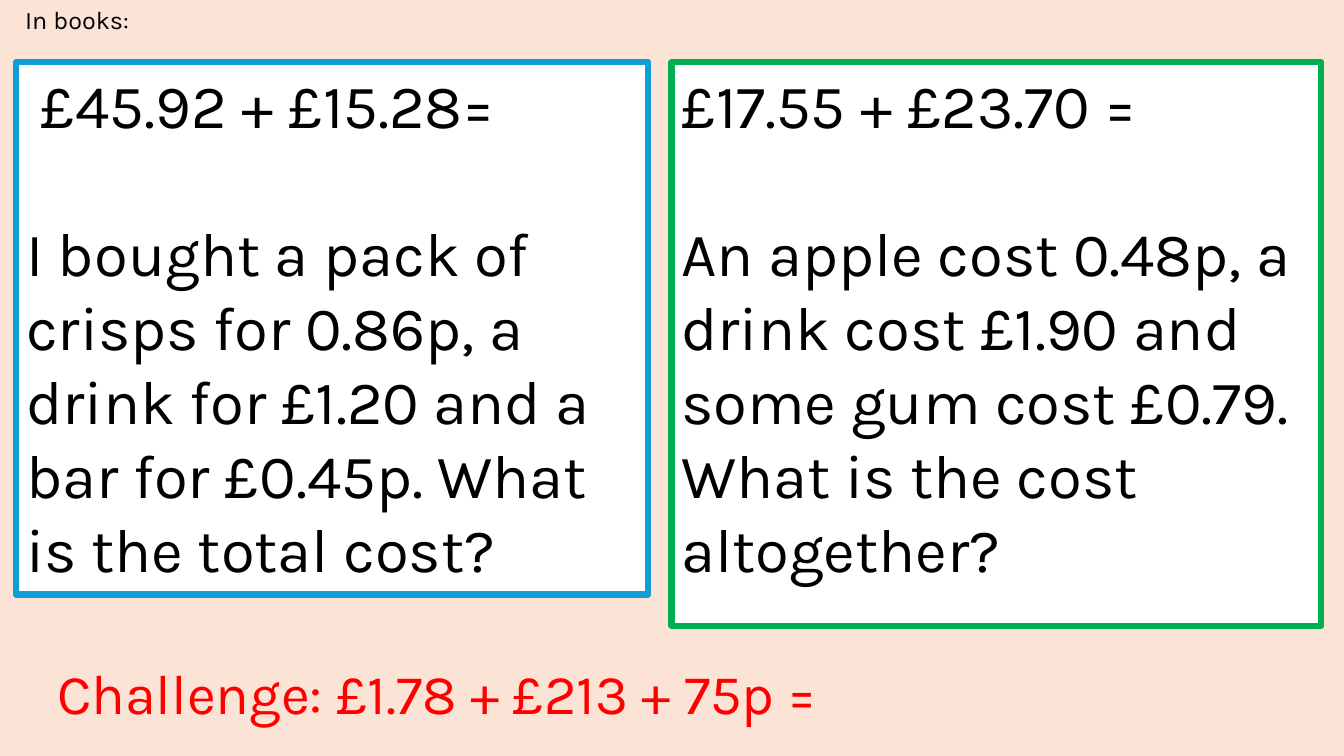
from pptx import Presentation
from pptx.dml.color import RGBColor
from pptx.enum.shapes import MSO_SHAPE
from pptx.enum.text import MSO_ANCHOR, MSO_AUTO_SIZE, PP_ALIGN
from pptx.util import Cm, Pt

RECTANGLE = MSO_SHAPE.RECTANGLE
TOP = MSO_ANCHOR.TOP
LEFT = PP_ALIGN.LEFT
NO_AUTOSIZE = MSO_AUTO_SIZE.NONE

FONT = "Karla"
TITLE_ONLY_LAYOUT = 5
COLOURS = {
    "background": "FBE3D6",
    "panel": "FFFFFF",
    "blue": "0F9ED5",
    "green": "00B050",
    "text": "000000",
    "challenge": "FF0000",
}


def colour(name):
    return RGBColor.from_string(COLOURS[name])


def write_text(shape, *texts, size, colour_name="text", gap=0):
    frame = shape.text_frame
    frame.word_wrap = True
    frame.auto_size = NO_AUTOSIZE
    frame.vertical_anchor = TOP
    for index, text in enumerate(texts):
        paragraph = frame.add_paragraph() if index else frame.paragraphs[0]
        paragraph.alignment = LEFT
        if index:
            paragraph.space_before = Pt(gap)
        run = paragraph.add_run()
        run.text = text
        run.font.name = FONT
        run.font.size = Pt(size)
        run.font.color.rgb = colour(colour_name)


def add_title(slide, text):
    title = slide.shapes.title
    title.left, title.top = Cm(0.38), Cm(-0.03)
    title.width, title.height = Cm(13.79), Cm(1.02)
    write_text(title, text, size=18)


def add_question_panel(slide, left, width, height, border, calculation, problem):
    panel = slide.shapes.add_shape(RECTANGLE, Cm(left), Cm(1.57), Cm(width), Cm(height))
    panel.shadow.inherit = False
    panel.fill.solid()
    panel.fill.fore_color.rgb = colour("panel")
    panel.line.color.rgb = colour(border)
    panel.line.width = Pt(4.5)
    write_text(panel, calculation, problem, size=44, gap=53)


def add_challenge(slide, text):
    box = slide.shapes.add_textbox(Cm(1.19), Cm(16.48), Cm(29.57), Cm(1.96))
    write_text(box, text, size=40, colour_name="challenge")


def main():
    presentation = Presentation()
    presentation.slide_width = Cm(33.87)
    presentation.slide_height = Cm(19.05)
    slide = presentation.slides.add_slide(presentation.slide_layouts[TITLE_ONLY_LAYOUT])
    slide.background.fill.solid()
    slide.background.fill.fore_color.rgb = colour("background")

    add_title(slide, "In books:")
    add_question_panel(
        slide, 0.41, 15.93, 13.41, "blue",
        " £45.92 + £15.28=",
        "I bought a pack of crisps for 0.86p, a drink for £1.20 and a bar "
        "for £0.45p. What is the total cost?",
    )
    add_question_panel(
        slide, 16.92, 16.38, 14.2, "green",
        "£17.55 + £23.70 =",
        "An apple cost 0.48p, a drink cost £1.90 and some gum cost £0.79. "
        "What is the cost altogether?",
    )
    add_challenge(slide, "Challenge: £1.78 + £213 + 75p =")
    presentation.save("out.pptx")


if __name__ == "__main__":
    main()
